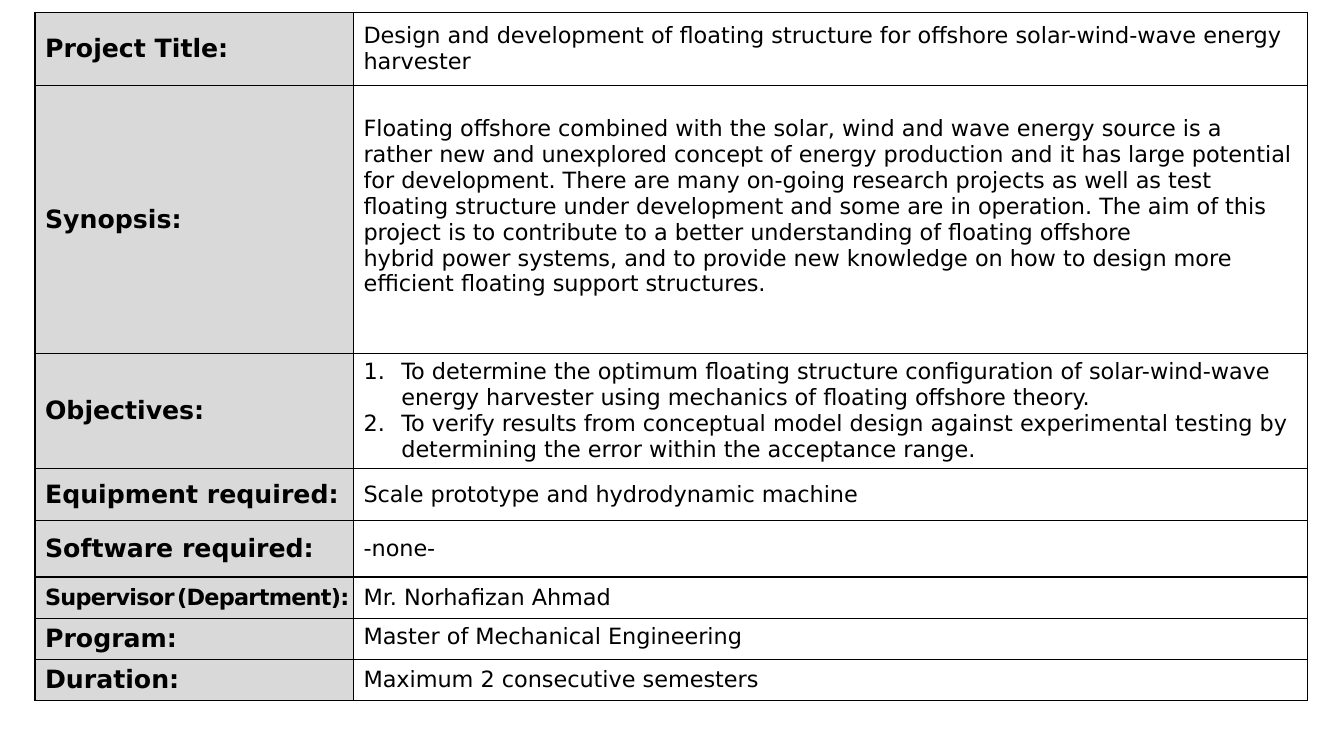
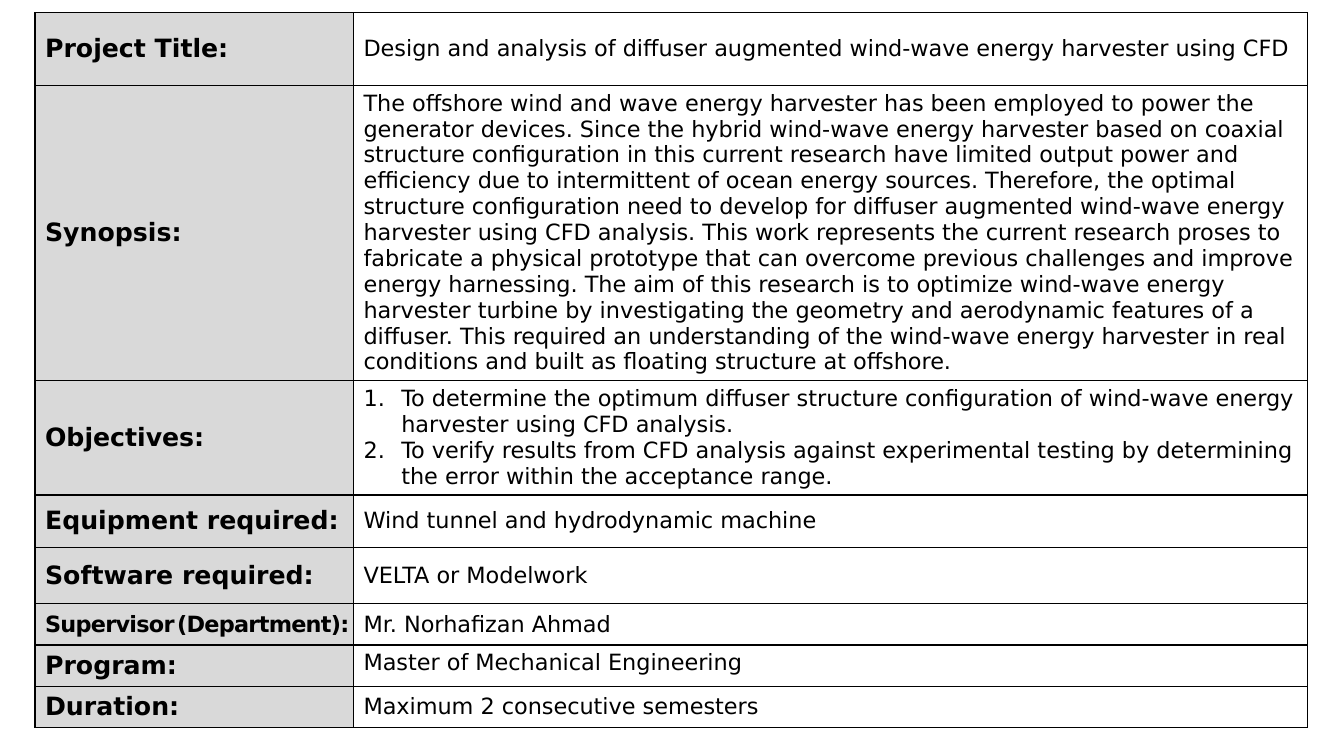
from dataclasses import dataclass

from lxml import etree
from pptx import Presentation
from pptx.dml.color import RGBColor
from pptx.enum import text
from pptx.oxml.ns import qn
from pptx.util import Pt


@dataclass(frozen=True)
class Theme:
    font: str = "DejaVu Sans"
    ink: str = "000000"
    label_fill: str = "D9D9D9"
    label_size: float = 18
    body_size: float = 16
    gap_size: float = 5
    border: float = 1
    list_indent: float = 27


T = Theme()

# Table layout in points, shared by both slides
LEFT, TOP = 25, 9
COLS = (227.5, 681.25)
ROWS = (52, 191.5, 82, 37.5, 40.25, 29.5, 29.5, 29.5)
LABELS = ("Project Title:", "Synopsis:", "Objectives:", "Equipment required:",
          "Software required:", "Supervisor (Department):", "Program:", "Duration:")
COMMON = ("Mr. Norhafizan Ahmad", "Master of Mechanical Engineering",
          "Maximum 2 consecutive semesters")
SUPERVISOR, PROGRAM = 5, 6

# Values per slide: one string, or a tuple of paragraphs
FLOATING = (
    "Design and development of floating structure for offshore solar-wind-wave energy harvester",
    ("Floating offshore combined with the solar, wind and wave energy source is a rather new and "
     "unexplored concept of energy production and it has large potential for development. There "
     "are many on-going research projects as well as test floating structure under development "
     "and some are in operation. The aim of this project is to contribute to a better "
     "understanding of floating offshore",
     "hybrid power systems, and to provide new knowledge on how to design more efficient "
     "floating support structures."),
    ("To determine the optimum floating structure configuration of solar-wind-wave energy "
     "harvester using mechanics of floating offshore theory.",
     "To verify results from conceptual model design against experimental testing by "
     "determining the error within the acceptance range."),
    "Scale prototype and hydrodynamic machine",
    "-none-",
)
DIFFUSER_SENTENCES = (
    "The offshore wind and wave energy harvester has been employed to power the generator "
    "devices.",
    "Since the hybrid wind-wave energy harvester based on coaxial structure configuration in "
    "this current research have limited output power and efficiency due to intermittent of "
    "ocean energy sources.",
    "Therefore, the optimal structure configuration need to develop for diffuser augmented "
    "wind-wave energy harvester using CFD analysis.",
    "This work represents the current research proses to fabricate a physical prototype that "
    "can overcome previous challenges and improve energy harnessing.",
    "The aim of this research is to optimize wind-wave energy harvester turbine by "
    "investigating the geometry and aerodynamic features of a diffuser.",
    "This required an understanding of the wind-wave energy harvester in real conditions and "
    "built as floating structure at offshore.",
)
DIFFUSER = (
    "Design and analysis of diffuser augmented wind-wave energy harvester using CFD",
    " ".join(DIFFUSER_SENTENCES),
    ("To determine the optimum diffuser structure configuration of wind-wave energy harvester "
     "using CFD analysis.",
     "To verify results from CFD analysis against experimental testing by determining the error "
     "within the acceptance range."),
    "Wind tunnel and hydrodynamic machine",
    "VELTA or Modelwork",
)


def add_run(p, content, size=T.body_size, bold=False, spacing=0):
    r = p.add_run()
    r.text = content
    f = r.font
    f.name, f.size, f.bold = T.font, Pt(size), bold
    f.color.rgb = RGBColor.from_string(T.ink)
    if spacing:
        r._r.get_or_add_rPr().set("spc", str(int(spacing * 100)))


def number_paragraph(p):
    pPr = p._p.get_or_add_pPr()
    pPr.set("marL", str(Pt(T.list_indent)))
    pPr.set("indent", str(-Pt(T.list_indent)))
    etree.SubElement(pPr, qn("a:buFont"), typeface="+mj-lt")
    etree.SubElement(pPr, qn("a:buAutoNum"), type="arabicPeriod")


def style_cell(cell, fill=None):
    # Borders must precede the fill in the cell properties
    tcPr = cell._tc.get_or_add_tcPr()
    for side in ("lnL", "lnR", "lnT", "lnB"):
        ln = etree.SubElement(tcPr, qn(f"a:{side}"), w=str(Pt(T.border)))
        solid = etree.SubElement(ln, qn("a:solidFill"))
        etree.SubElement(solid, qn("a:srgbClr"), val=T.ink)
    if fill:
        cell.fill.solid()
        cell.fill.fore_color.rgb = RGBColor.from_string(fill)
    else:
        cell.fill.background()
    cell.vertical_anchor = text.MSO_ANCHOR.MIDDLE


def fill_label(cell, label, tight=False):
    style_cell(cell, T.label_fill)
    p = cell.text_frame.paragraphs[0]
    if not tight:
        add_run(p, label, T.label_size, bold=True)
        return
    # The long label is condensed to stay on one line
    cell.margin_right = 0
    first, last = label.split(" ")
    for part, size in ((first, T.body_size), (" ", T.gap_size), (last, T.body_size)):
        add_run(p, part, size, bold=True, spacing=-0.5)


def fill_value(cell, value, numbered=False):
    style_cell(cell)
    tf = cell.text_frame
    for i, content in enumerate((value,) if isinstance(value, str) else value):
        p = tf.add_paragraph() if i else tf.paragraphs[0]
        if numbered:
            number_paragraph(p)
        add_run(p, content)


def add_project(prs, values):
    s = prs.slides.add_slide(prs.slide_layouts[6])
    frame = s.shapes.add_table(len(ROWS), len(COLS), Pt(LEFT), Pt(TOP),
                               Pt(sum(COLS)), Pt(sum(ROWS)))
    tbl = frame.table
    tbl.first_row = tbl.horz_banding = False
    for col, width in zip(tbl.columns, COLS):
        col.width = Pt(width)
    for i, (label, value) in enumerate(zip(LABELS, values + COMMON)):
        tbl.rows[i].height = Pt(ROWS[i])
        fill_label(tbl.cell(i, 0), label, tight=i == SUPERVISOR)
        fill_value(tbl.cell(i, 1), value, numbered=label == "Objectives:")
    tbl.cell(PROGRAM, 1).vertical_anchor = text.MSO_ANCHOR.TOP
    return tbl


def main():
    prs = Presentation()
    prs.slide_width, prs.slide_height = Pt(960), Pt(540)
    floating = add_project(prs, FLOATING)
    # This synopsis sits slightly above the middle of its row
    floating.cell(1, 1).margin_bottom = Pt(22)
    add_project(prs, DIFFUSER)
    prs.save("out.pptx")


if __name__ == "__main__":
    main()
